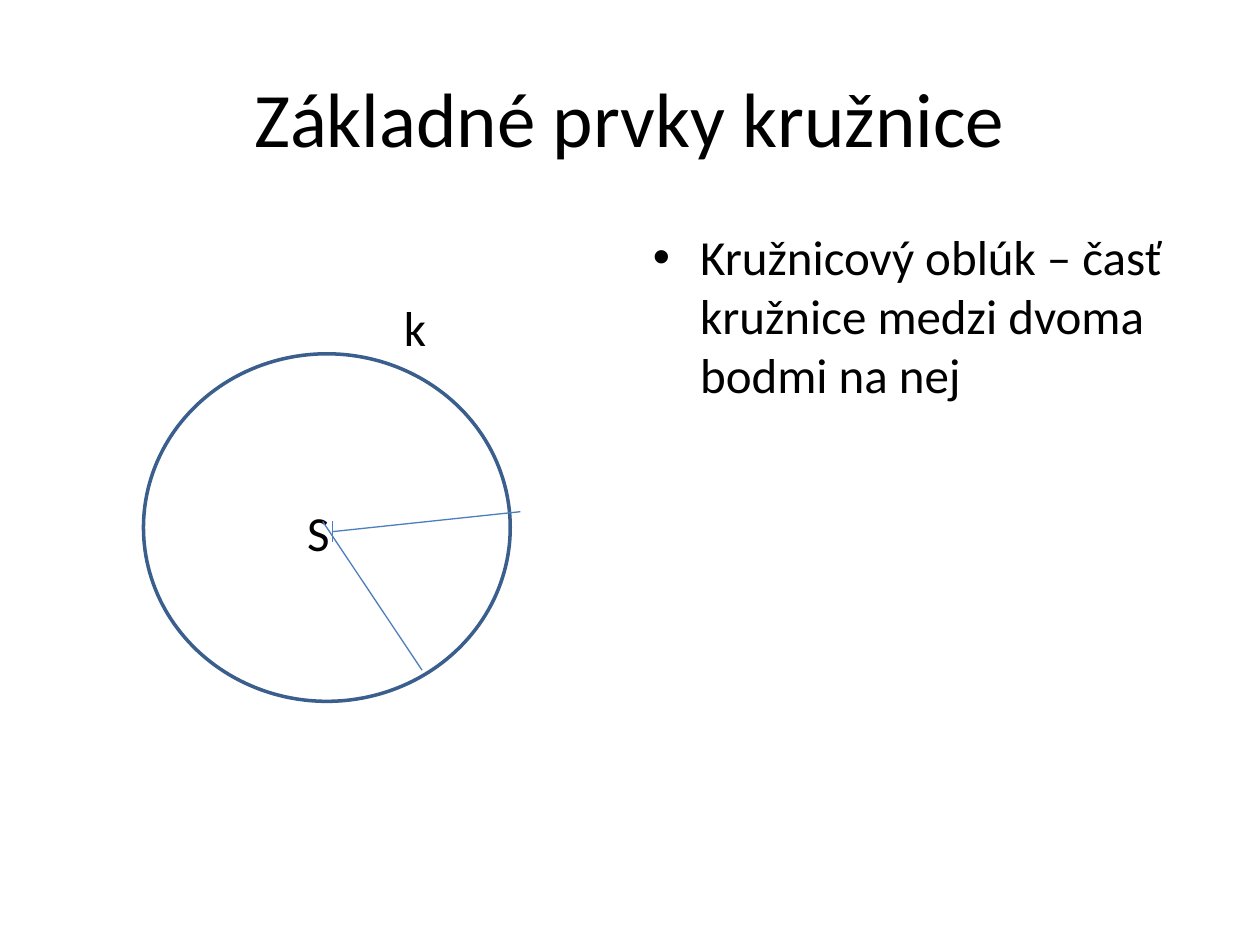
from dataclasses import dataclass

from lxml.etree import SubElement
from pptx import Presentation
from pptx.dml.color import RGBColor
from pptx.enum.shapes import MSO_CONNECTOR, MSO_SHAPE
from pptx.enum.text import MSO_ANCHOR, PP_ALIGN
from pptx.oxml.ns import qn
from pptx.util import Pt


@dataclass(frozen=True)
class Theme:
    font: str = "Calibri"
    ink: RGBColor = RGBColor(0, 0, 0)
    ring: RGBColor = RGBColor(0x3A, 0x5F, 0x8C)
    ray: RGBColor = RGBColor(0x4B, 0x7E, 0xBC)
    title: int = 44
    body: int = 28


THEME = Theme()


def style(frame, size):
    for par in frame.paragraphs:
        for run in par.runs:
            run.font.name = THEME.font
            run.font.size = Pt(size)
            run.font.color.rgb = THEME.ink


def add_title(slide, text):
    title = slide.shapes.title
    title.left, title.top = Pt(36), Pt(21.6)
    title.width, title.height = Pt(648), Pt(90)
    frame = title.text_frame
    frame.text = text
    frame.vertical_anchor = MSO_ANCHOR.MIDDLE
    frame.paragraphs[0].alignment = PP_ALIGN.CENTER
    style(frame, THEME.title)


def add_text(slide, text, left, top, width, height):
    box = slide.shapes.add_textbox(Pt(left), Pt(top), Pt(width), Pt(height))
    frame = box.text_frame
    frame.word_wrap = True
    frame.text = text
    style(frame, THEME.body)
    return frame


def add_label(slide, text, left, top):
    """Place a one-letter name with no inner margins."""
    frame = add_text(slide, text, left, top, 20, 34)
    frame.margin_left = frame.margin_right = 0
    frame.margin_top = frame.margin_bottom = 0


def add_bullet(slide, text, left, top, width, height):
    frame = add_text(slide, text, left, top, width, height)
    par = frame.paragraphs[0]
    props = par._p.get_or_add_pPr()
    props.set("marL", str(Pt(27)))
    props.set("indent", str(-Pt(27)))
    SubElement(props, qn("a:buFont"), typeface="Arial")
    SubElement(props, qn("a:buChar"), char="•")


def add_ring(slide, left, top, width, height):
    ring = slide.shapes.add_shape(
        MSO_SHAPE.OVAL, Pt(left), Pt(top), Pt(width), Pt(height))
    ring.shadow.inherit = False
    ring.fill.background()
    ring.line.color.rgb = THEME.ring
    ring.line.width = Pt(2)


def add_line(slide, start, end):
    line = slide.shapes.add_connector(
        MSO_CONNECTOR.STRAIGHT, *map(Pt, start + end))
    line.line.color.rgb = THEME.ray
    line.line.width = Pt(0.75)
    SubElement(line._element.spPr, qn("a:effectLst"))


def main():
    deck = Presentation()
    deck.slide_width, deck.slide_height = Pt(720), Pt(540)
    slide = deck.slides.add_slide(deck.slide_layouts[5])

    add_title(slide, "Základné prvky kružnice")
    add_label(slide, "k", 230.8, 170)
    add_label(slide, "S", 175.5, 287.2)
    add_bullet(slide, "Kružnicový oblúk – časť kružnice medzi dvoma bodmi na nej",
               366, 126, 318, 356.4)

    add_ring(slide, 82, 202.2, 209.6, 198.6)
    add_line(slide, (190, 303.8), (297.4, 292.4))
    add_line(slide, (190, 298), (190, 309.6))
    add_line(slide, (184.4, 298), (241.2, 383))

    deck.save("out.pptx")


if __name__ == "__main__":
    main()
